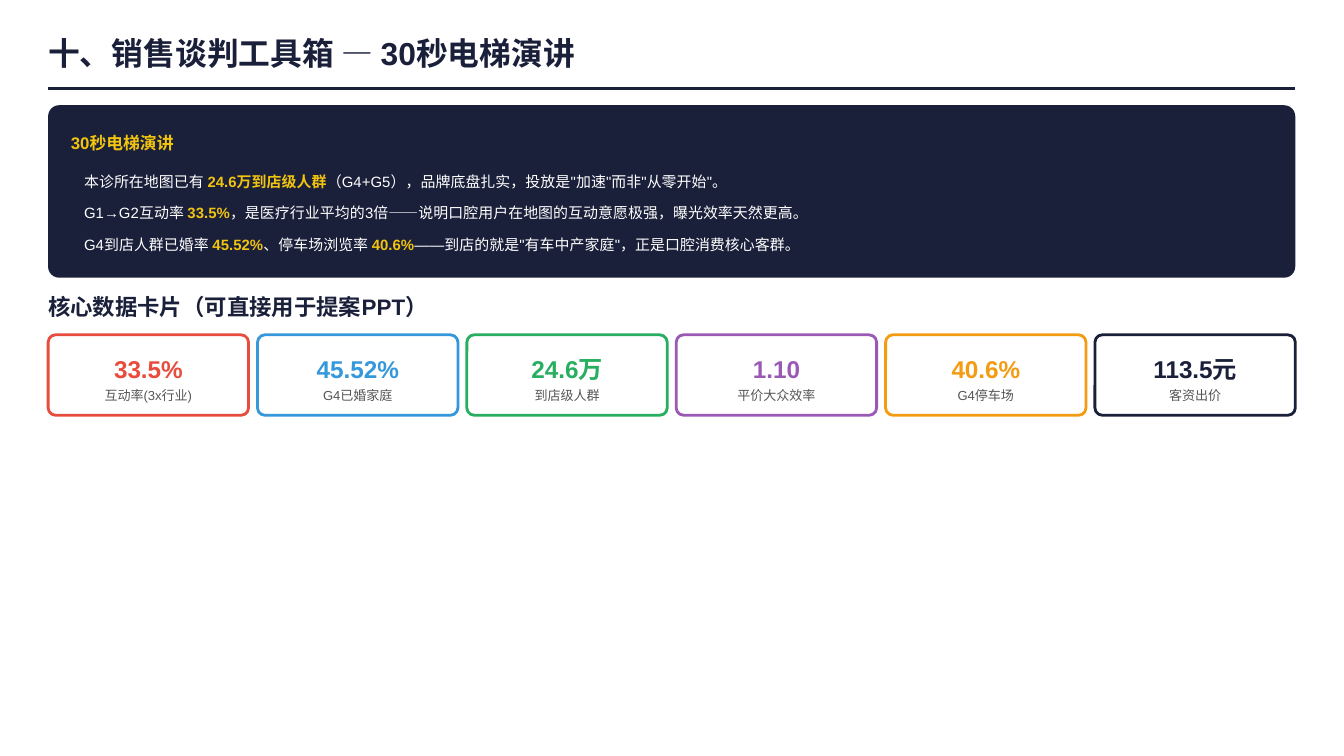
from lxml import etree
from pptx import Presentation
from pptx.dml.color import RGBColor
from pptx.enum.shapes import MSO_CONNECTOR, MSO_SHAPE
from pptx.enum.text import MSO_ANCHOR, PP_ALIGN
from pptx.oxml.ns import qn
from pptx.util import Cm, Pt

STRAIGHT = MSO_CONNECTOR.STRAIGHT
ROUNDED = MSO_SHAPE.ROUNDED_RECTANGLE
TOP = MSO_ANCHOR.TOP
LEFT, CENTER = PP_ALIGN.LEFT, PP_ALIGN.CENTER

NAVY = RGBColor(0x1A, 0x1F, 0x3A)
YELLOW = RGBColor(0xF1, 0xC4, 0x0F)
WHITE = RGBColor(0xFF, 0xFF, 0xFF)
GRAY = RGBColor(0x55, 0x55, 0x55)
RED = RGBColor(0xE7, 0x4C, 0x3C)
BLUE = RGBColor(0x34, 0x98, 0xDB)
GREEN = RGBColor(0x27, 0xAE, 0x60)
PURPLE = RGBColor(0x9B, 0x59, 0xB6)
ORANGE = RGBColor(0xF3, 0x9C, 0x12)

FONT = "Arial"
MARGIN = 0.91
CONTENT_WIDTH = 23.57
CARD_GAP = 0.17

PITCH_LINES = [
    [("本诊所在地图已有 ", False), ("24.6万到店级人群", True),
     ("（G4+G5），品牌底盘扎实，投放是\"加速\"而非\"从零开始\"。", False)],
    [("G1→G2互动率 ", False), ("33.5%", True),
     ("，是医疗行业平均的3倍——说明口腔用户在地图的互动意愿极强，曝光效率天然更高。", False)],
    [("G4到店人群已婚率 ", False), ("45.52%", True), ("、停车场浏览率 ", False),
     ("40.6%", True), ("——到店的就是\"有车中产家庭\"，正是口腔消费核心客群。", False)],
]
CARDS = [
    ("33.5%", "互动率(3x行业)", RED),
    ("45.52%", "G4已婚家庭", BLUE),
    ("24.6万", "到店级人群", GREEN),
    ("1.10", "平价大众效率", PURPLE),
    ("40.6%", "G4停车场", ORANGE),
    ("113.5元", "客资出价", NAVY),
]


def format_font(font, size, color, bold):
    font.name = FONT
    font.size = Pt(size)
    font.bold = bold
    font.color.rgb = color


def prepare_frame(text_frame):
    text_frame.margin_left = text_frame.margin_right = 0
    text_frame.margin_top = text_frame.margin_bottom = 0
    text_frame.vertical_anchor = TOP
    text_frame.word_wrap = True


def add_text_frame(slide, left, top, width, height):
    box = slide.shapes.add_textbox(Cm(left), Cm(top), Cm(width), Cm(height))
    prepare_frame(box.text_frame)
    return box.text_frame


def add_label(slide, text, left, top, width, height, size, color,
              bold=True, alignment=LEFT, spacing=None):
    text_frame = add_text_frame(slide, left, top, width, height)
    text_frame.text = text
    paragraph = text_frame.paragraphs[0]
    paragraph.alignment = alignment
    if spacing:
        paragraph.line_spacing = Pt(spacing)
    format_font(paragraph.runs[0].font, size, color, bold)


def add_rounded_box(slide, left, top, width, height, radius):
    shape = slide.shapes.add_shape(ROUNDED, Cm(left), Cm(top), Cm(width), Cm(height))
    shape.adjustments[0] = radius / min(width, height)
    shape.shadow.inherit = False
    return shape


def add_heading(slide, left, top, width):
    title = slide.shapes.title
    title.left, title.top = Cm(left), Cm(top)
    title.width, title.height = Cm(width), Cm(0.84)
    title.text_frame.text = "十、销售谈判工具箱 — 30秒电梯演讲"
    prepare_frame(title.text_frame)
    paragraph = title.text_frame.paragraphs[0]
    paragraph.alignment = LEFT
    format_font(paragraph.runs[0].font, 17, NAVY, True)

    rule_top = Cm(top + 1.05)
    rule = slide.shapes.add_connector(
        STRAIGHT, Cm(left), rule_top, Cm(left + width), rule_top)
    rule.line.color.rgb = NAVY
    rule.line.width = Pt(1.5)
    etree.SubElement(rule._element.spPr, qn("a:effectLst"))


def add_pitch_panel(slide, left, top, width, height):
    panel = add_rounded_box(slide, left, top, width, height, 0.21)
    panel.fill.solid()
    panel.fill.fore_color.rgb = NAVY
    panel.line.fill.background()

    add_label(slide, "30秒电梯演讲", left + 0.43, top + 0.43, width - 0.86, 0.48,
              9, YELLOW, spacing=13.5)
    text_frame = add_text_frame(slide, left + 0.68, top + 1.04, width - 1.11, 1.75)
    for index, line in enumerate(PITCH_LINES):
        paragraph = text_frame.add_paragraph() if index else text_frame.paragraphs[0]
        paragraph.line_spacing = Pt(16)
        paragraph.space_after = Pt(1)
        for text, highlighted in line:
            run = paragraph.add_run()
            run.text = text
            format_font(run.font, 8, YELLOW if highlighted else WHITE, highlighted)


def add_card(slide, value, caption, color, left, top, width, height):
    card = add_rounded_box(slide, left, top, width, height, 0.14)
    card.fill.background()
    card.line.color.rgb = color
    card.line.width = Pt(1.5)
    add_label(slide, value, left + 0.2, top + 0.23, width - 0.4, 0.69,
              13, color, alignment=CENTER, spacing=19.5)
    add_label(slide, caption, left + 0.2, top + 0.92, width - 0.4, 0.38,
              7, GRAY, bold=False, alignment=CENTER, spacing=10.5)


def add_card_section(slide, left, top, width):
    add_label(slide, "核心数据卡片（可直接用于提案PPT）", left, top, width, 0.58, 12, NAVY)
    card_width = (width - CARD_GAP * (len(CARDS) - 1)) / len(CARDS)
    for index, (value, caption, color) in enumerate(CARDS):
        add_card(slide, value, caption, color,
                 left + index * (card_width + CARD_GAP), top + 0.79, card_width, 1.52)


def main():
    presentation = Presentation()
    presentation.slide_width = Cm(25.4)
    presentation.slide_height = Cm(14.29)
    slide = presentation.slides.add_slide(presentation.slide_layouts[5])
    add_heading(slide, MARGIN, 0.63, CONTENT_WIDTH)
    add_pitch_panel(slide, MARGIN, 1.99, CONTENT_WIDTH, 3.26)
    add_card_section(slide, MARGIN, 5.54, CONTENT_WIDTH)
    presentation.save("out.pptx")


if __name__ == "__main__":
    main()
